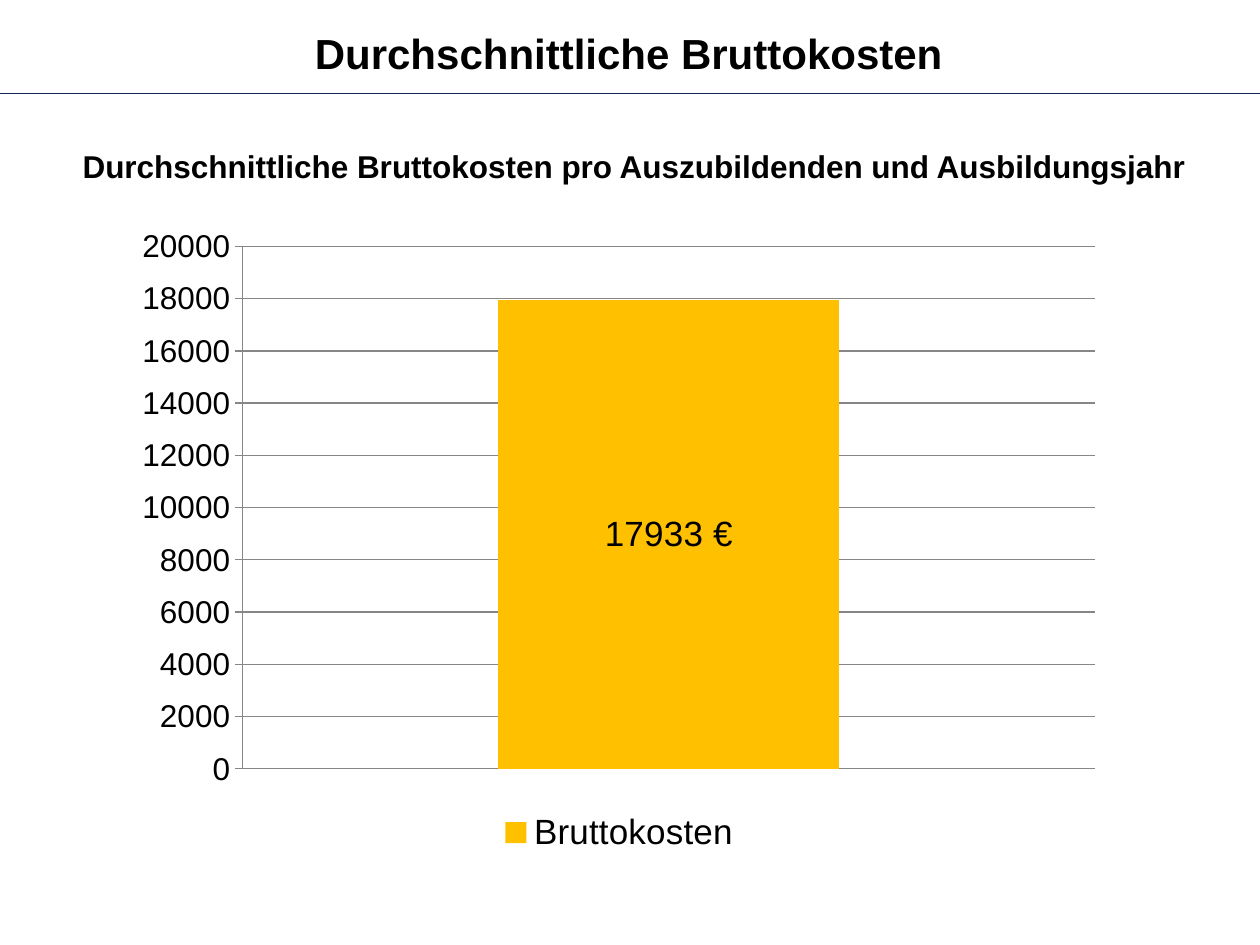
import pptx
import pptx.chart.data
import pptx.dml.color
import pptx.enum.chart
import pptx.enum.shapes
import pptx.enum.text
import pptx.util
from lxml import etree
from pptx.util import Inches

COLORS = {"text": "000000", "rule": "142A56", "bar": "FFC000", "grid": "868686"}


def rgb(name):
    return pptx.dml.color.RGBColor.from_string(COLORS[name])


def write(tf, text, size, bold=True, color="text"):
    """Fill a text frame with one centred, formatted paragraph."""
    tf.word_wrap = True
    tf.vertical_anchor = pptx.enum.text.MSO_ANCHOR.MIDDLE
    p = tf.paragraphs[0]
    p.alignment = pptx.enum.text.PP_ALIGN.CENTER
    p.space_before = pptx.util.Pt(0)
    r = p.add_run()
    r.text = text
    r.font.name, r.font.size, r.font.bold = "Arial", pptx.util.Pt(size), bold
    r.font.color.rgb = rgb(color)


prs = pptx.Presentation()
prs.slide_width, prs.slide_height = Inches(10), Inches(7.5)
s = prs.slides.add_slide(prs.slide_layouts[5])

# Title, rule and subtitle
title = s.shapes.title
title.left, title.top = Inches(0.66), Inches(0.18)
title.width, title.height = Inches(8.66), Inches(0.48)
write(title.text_frame, "Durchschnittliche Bruttokosten", 24)

rule = s.shapes.add_connector(
    pptx.enum.shapes.MSO_CONNECTOR.STRAIGHT,
    Inches(0), Inches(0.74), Inches(10), Inches(0.74))
rule.line.color.rgb = rgb("rule")
rule.line.width = pptx.util.Pt(0.75)
etree.SubElement(rule._element.spPr, pptx.oxml.ns.qn("a:effectLst"))

subtitle = s.shapes.add_textbox(Inches(0.35), Inches(1.12), Inches(9.37), Inches(0.4))
write(subtitle.text_frame,
      "Durchschnittliche Bruttokosten pro Auszubildenden und Ausbildungsjahr", 18)

# Cost chart
data = pptx.chart.data.CategoryChartData()
data.categories = ["1"]
data.add_series("Bruttokosten", [17933])
chart = s.shapes.add_chart(
    pptx.enum.chart.XL_CHART_TYPE.COLUMN_CLUSTERED,
    Inches(0.98), Inches(1.7), Inches(7.87), Inches(5.12), data).chart
chart.has_title = False
chart.font.name, chart.font.size = "Arial", pptx.util.Pt(10)
chart.font.color.rgb = rgb("text")
chart.category_axis.visible = False

axis = chart.value_axis
axis.minimum_scale, axis.maximum_scale, axis.major_unit = 0, 20000, 2000
axis.major_tick_mark = pptx.enum.chart.XL_TICK_MARK.OUTSIDE
axis.tick_labels.font.size = pptx.util.Pt(18)
axis.tick_labels.number_format = "0"
axis.tick_labels.number_format_is_linked = False
axis.has_major_gridlines = True
for line in (axis.format.line, axis.major_gridlines.format.line):
    line.color.rgb = rgb("grid")
    line.width = pptx.util.Pt(0.75)

chart.has_legend = True
chart.legend.position = pptx.enum.chart.XL_LEGEND_POSITION.BOTTOM
chart.legend.include_in_layout = False
chart.legend.font.size = pptx.util.Pt(20)

plot = chart.plots[0]
plot.gap_width = 150
plot.vary_by_categories = False
bars = plot.series[0]
bars.format.fill.solid()
bars.format.fill.fore_color.rgb = rgb("bar")
labels = bars.data_labels
labels.show_value = True
labels.position = pptx.enum.chart.XL_LABEL_POSITION.CENTER
labels.number_format = '0" €"'
labels.number_format_is_linked = False
labels.font.size = pptx.util.Pt(20)
labels.font.color.rgb = rgb("text")

# Fixed inner plot area, as fractions of the chart
area = chart._chartSpace.chart.plotArea
for old in area.findall(pptx.oxml.ns.qn("c:layout")):
    area.remove(old)
layout = etree.Element(pptx.oxml.ns.qn("c:layout"))
manual = etree.SubElement(layout, pptx.oxml.ns.qn("c:manualLayout"))
for tag, value in (("layoutTarget", "inner"), ("xMode", "edge"), ("yMode", "edge"),
                   ("x", "0.12"), ("y", "0.05"), ("w", "0.86"), ("h", "0.81")):
    etree.SubElement(manual, pptx.oxml.ns.qn("c:" + tag)).set("val", value)
area.insert(0, layout)

prs.save("out.pptx")
